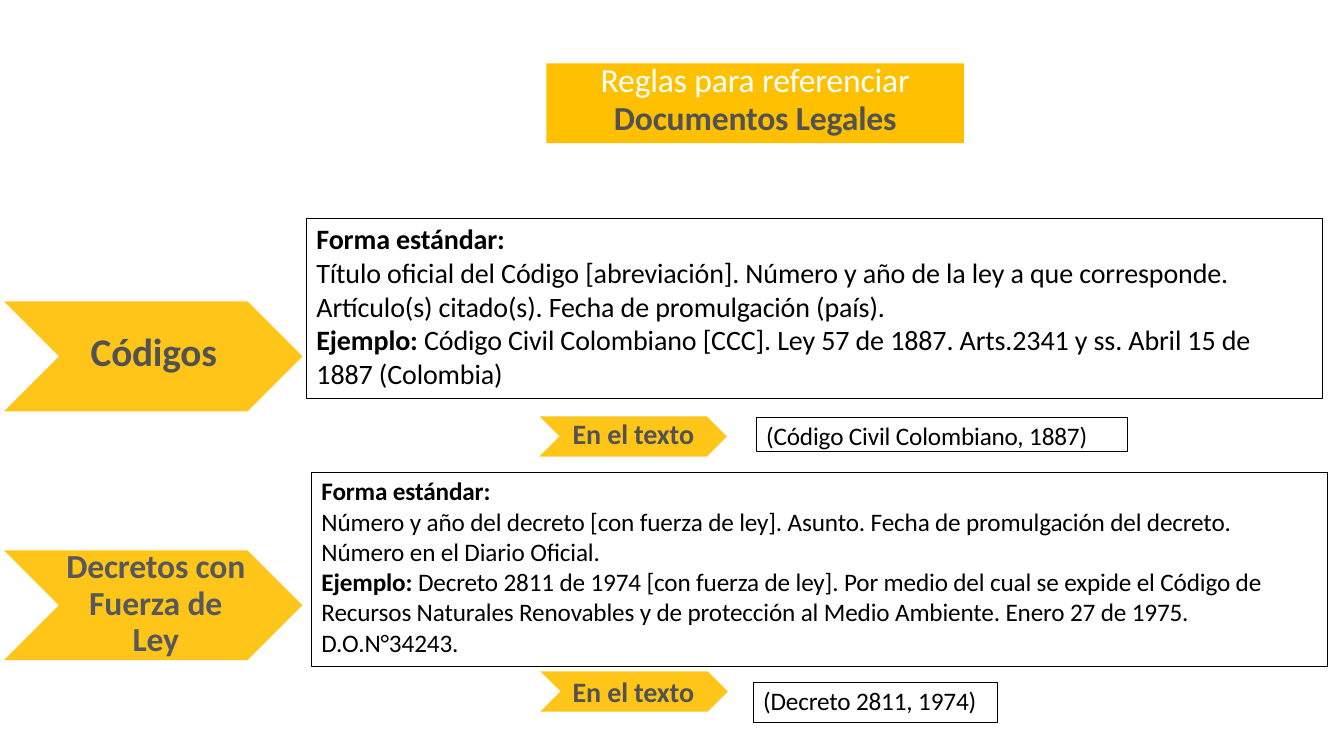
from dataclasses import dataclass

import pptx
import pptx.dml.color
import pptx.enum.shapes
import pptx.enum.text
import pptx.oxml
import pptx.oxml.ns
import pptx.util
from pptx.util import Inches

ALIGN = pptx.enum.text.PP_ALIGN


@dataclass(frozen=True)
class Theme:
    font: str = "Calibri"
    gold: str = "FFC000"
    white: str = "FFFFFF"
    black: str = "000000"
    gray: str = "525252"
    slate: str = "57585B"
    arrow_opacity: int = 90
    heading: int = 28
    title: int = 24
    large: int = 20
    small: int = 18
    tracking: float = -0.1


THEME = Theme()


def rgb(value):
    return pptx.dml.color.RGBColor.from_string(value)


def add_run(paragraph, text, size, color, bold=False):
    run = paragraph.add_run()
    run.text = text
    font = run.font
    font.name = THEME.font
    font.size = pptx.util.Pt(size)
    font.bold = bold
    font.color.rgb = rgb(color)
    run._r.get_or_add_rPr().set("spc", str(round(THEME.tracking * 100)))


def set_frame(shape, left=0, top=0, right=0):
    frame = shape.text_frame
    frame.word_wrap = True
    frame.auto_size = pptx.enum.text.MSO_AUTO_SIZE.NONE
    frame.vertical_anchor = pptx.enum.text.MSO_ANCHOR.TOP
    frame.margin_left = Inches(left)
    frame.margin_top = Inches(top)
    frame.margin_right = Inches(right)
    frame.margin_bottom = 0
    return frame


def fill_title(slide):
    title = slide.shapes.title
    title.left, title.top = Inches(5.42), Inches(0.63)
    title.width, title.height = Inches(4.14), Inches(0.79)
    title.fill.solid()
    title.fill.fore_color.rgb = rgb(THEME.gold)
    frame = set_frame(title)
    lines = [
        ("Reglas para referenciar", THEME.white, False, 25.4),
        ("Documentos Legales", THEME.gray, True, 27.4),
    ]
    for index, (text, color, bold, spacing) in enumerate(lines):
        paragraph = frame.add_paragraph() if index else frame.paragraphs[0]
        paragraph.alignment = ALIGN.CENTER
        paragraph.line_spacing = pptx.util.Pt(spacing)
        paragraph.space_before = pptx.util.Pt(0)
        add_run(paragraph, text, THEME.title, color, bold)


def add_arrow(slide, left, top, width, height):
    right, bottom, middle = left + width, top + height, top + height / 2
    notch = height / 2
    points = [
        (left, top),
        (left + notch, middle),
        (left, bottom),
        (right - notch, bottom),
        (right, middle),
    ]
    builder = slide.shapes.build_freeform(Inches(right - notch), Inches(top))
    builder.add_line_segments([(Inches(x), Inches(y)) for x, y in points], close=True)
    arrow = builder.convert_to_shape()
    arrow.shadow.inherit = False
    arrow.line.fill.background()
    arrow.fill.solid()
    arrow.fill.fore_color.rgb = rgb(THEME.gold)
    color = arrow._element.spPr.find(".//" + pptx.oxml.ns.qn("a:srgbClr"))
    alpha = pptx.oxml.parse_xml(
        f"<a:alpha {pptx.oxml.ns.nsdecls('a')} val='{THEME.arrow_opacity * 1000}'/>"
    )
    color.append(alpha)


def add_label(slide, place, lines, size, color=THEME.gray, inset=0.01, spacing=None, before=1):
    label = slide.shapes.add_textbox(*map(Inches, place))
    paragraph = set_frame(label, left=0.01, top=inset).paragraphs[0]
    paragraph.alignment = ALIGN.CENTER if len(lines) > 1 else ALIGN.LEFT
    paragraph.space_before = pptx.util.Pt(before)
    if spacing:
        paragraph.line_spacing = pptx.util.Pt(spacing)
    for index, line in enumerate(lines):
        if index:
            paragraph.add_line_break()
        add_run(paragraph, line, size, color, True)


def add_box(slide, place, paragraphs, size, right=0.0):
    box = slide.shapes.add_shape(pptx.enum.shapes.MSO_SHAPE.RECTANGLE, *map(Inches, place))
    box.shadow.inherit = False
    box.fill.background()
    box.line.color.rgb = rgb(THEME.black)
    box.line.width = pptx.util.Pt(0.75)
    frame = set_frame(box, left=0.1, top=0.03, right=right)
    for index, runs in enumerate(paragraphs):
        paragraph = frame.add_paragraph() if index else frame.paragraphs[0]
        paragraph.alignment = ALIGN.LEFT
        paragraph.space_before = pptx.util.Pt(0 if index else 2.5)
        for text, bold in runs:
            add_run(paragraph, text, size, THEME.black, bold)


def add_citation(slide, arrow_place, label_top, box_place, text):
    add_arrow(slide, *arrow_place)
    add_label(slide, (5.67, label_top, 1.25, 0.36), ["En el texto"], THEME.large)
    add_box(slide, box_place, [[(text, False)]], THEME.small)


def main():
    presentation = pptx.Presentation()
    presentation.slide_width = Inches(13.33)
    presentation.slide_height = Inches(7.5)
    slide = presentation.slides.add_slide(presentation.slide_layouts[5])
    fill_title(slide)

    for top in (2.99, 5.46):
        add_arrow(slide, 0.04, top, 2.96, 1.09)
    add_label(slide, (0.89, 3.24, 1.4, 0.49), ["Códigos"], THEME.heading)
    add_label(
        slide, (0.63, 5.39, 1.82, 1.15), ["Decretos con", "Fuerza de", "Ley"],
        THEME.title, THEME.slate, inset=0.06, spacing=25.9, before=4.2,
    )

    standard_form = [("Forma estándar:", True)]
    code_rules = [
        standard_form,
        [("Título oficial del Código [abreviación]. Número y año de la ley a que "
          "corresponde. Artículo(s) citado(s). Fecha de promulgación (país).", False)],
        [("Ejemplo: ", True),
         ("Código Civil Colombiano [CCC]. Ley 57 de 1887. Arts.2341 y ss. "
          "Abril 15 de 1887 (Colombia)", False)],
    ]
    decree_rules = [
        standard_form,
        [("Número y año del decreto [con fuerza de ley]. Asunto. Fecha de promulgación "
          "del decreto. Número en el Diario Oficial.", False)],
        [("Ejemplo: ", True),
         ("Decreto 2811 de 1974 [con fuerza de ley]. Por medio del cual se expide el "
          "Código de Recursos Naturales Renovables y de protección al Medio Ambiente. "
          "Enero 27 de 1975.", False)],
        [("D.O.N°34243.", False)],
    ]
    add_box(slide, (3.04, 2.17, 10.08, 1.78), code_rules, THEME.large, right=0.3)
    add_box(slide, (3.09, 4.69, 10.08, 1.92), decree_rules, THEME.small, right=0.3)
    add_citation(slide, (5.35, 4.13, 1.86, 0.4), 4.12, (7.5, 4.14, 3.68, 0.34),
                 "(Código Civil Colombiano, 1887)")
    add_citation(slide, (5.36, 6.66, 1.86, 0.4), 6.68, (7.47, 6.77, 2.42, 0.4),
                 "(Decreto 2811, 1974)")
    presentation.save("out.pptx")


if __name__ == "__main__":
    main()
